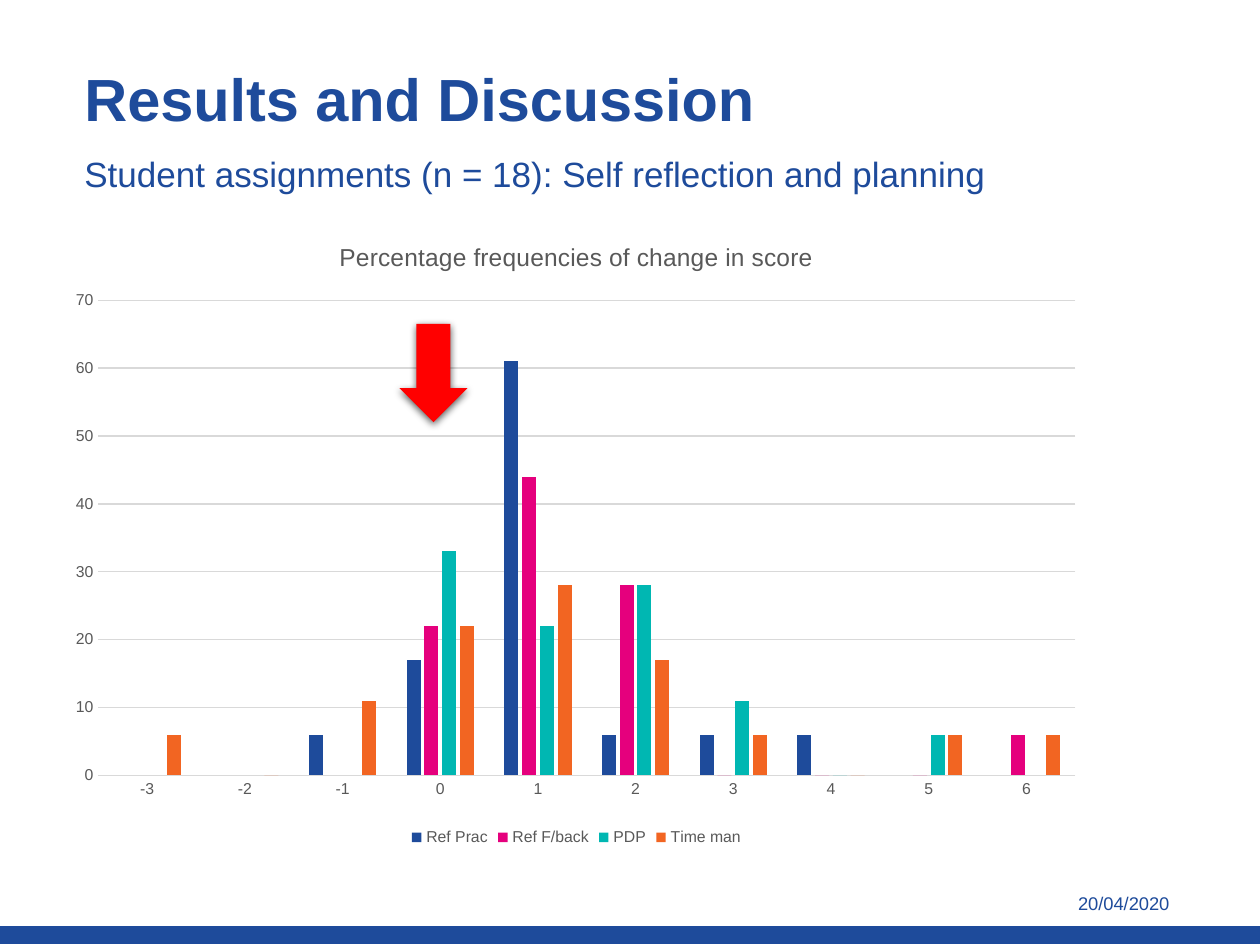
from dataclasses import dataclass

from lxml import etree
from pptx import Presentation
from pptx.chart.data import CategoryChartData
from pptx.dml.color import RGBColor
from pptx.enum.chart import XL_CHART_TYPE, XL_LEGEND_POSITION, XL_TICK_MARK
from pptx.enum.shapes import MSO_SHAPE
from pptx.enum.text import MSO_ANCHOR, PP_ALIGN
from pptx.oxml import parse_xml
from pptx.oxml.ns import nsdecls, qn
from pptx.util import Inches, Pt

COLUMN = XL_CHART_TYPE.COLUMN_CLUSTERED
BOTTOM = XL_LEGEND_POSITION.BOTTOM
NO_TICK = XL_TICK_MARK.NONE
RECT, ARROW = MSO_SHAPE.RECTANGLE, MSO_SHAPE.DOWN_ARROW
TOP, MIDDLE = MSO_ANCHOR.TOP, MSO_ANCHOR.MIDDLE
LEFT, RIGHT = PP_ALIGN.LEFT, PP_ALIGN.RIGHT


@dataclass(frozen=True)
class Theme:
    font: str = "Arial"
    blue: str = "1E4B9B"
    pink: str = "E5007D"
    teal: str = "00B7B2"
    orange: str = "F26522"
    red: str = "FF0000"
    gray: str = "595959"
    grid: str = "D9D9D9"
    head: float = 34
    sub: float = 20
    title: float = 14
    date: float = 10.5
    label: float = 9


THEME = Theme()
SCORES = [str(n) for n in range(-3, 7)]
SERIES = [
    ("Ref Prac", THEME.blue, [None, None, 6, 17, 61, 6, 6, 6, None, None]),
    ("Ref F/back", THEME.pink, [None, None, None, 22, 44, 28, 0, 0, 0, 6]),
    ("PDP", THEME.teal, [None, None, None, 33, 22, 28, 11, 0, 6, None]),
    ("Time man", THEME.orange, [6, 0, 11, 22, 28, 17, 6, 0, 6, 6]),
]


def color(code):
    return RGBColor.from_string(code)


def style(font, size, code, bold=False):
    font.name = THEME.font
    font.size = Pt(size)
    font.bold = bold
    font.color.rgb = color(code)


def paint(fill, code):
    fill.solid()
    fill.fore_color.rgb = color(code)


def stroke(line, code, width=0.75):
    line.color.rgb = color(code)
    line.width = Pt(width)


def add_text(slide, box, text, size, bold=False, align=LEFT, anchor=TOP,
             pads=(0.04, 0.04, 0.02, 0.04), space=None):
    frame = slide.shapes.add_textbox(*map(Inches, box)).text_frame
    frame.word_wrap = True
    frame.vertical_anchor = anchor
    (frame.margin_left, frame.margin_top,
     frame.margin_right, frame.margin_bottom) = map(Inches, pads)
    para = frame.paragraphs[0]
    para.text = text
    para.alignment = align
    para.line_spacing = space
    style(para.font, size, THEME.blue, bold)


def add_block(slide, kind, box, code):
    shape = slide.shapes.add_shape(kind, *map(Inches, box))
    shape.shadow.inherit = False
    paint(shape.fill, code)
    shape.line.fill.background()
    return shape


def add_shade(shape):
    effects = shape._element.spPr.find(qn("a:effectLst"))
    shade = etree.SubElement(
        effects, qn("a:outerShdw"), blurRad=str(Pt(4.5)), dist=str(Pt(1.5)),
        dir="5400000", algn="ctr", rotWithShape="0")
    black = etree.SubElement(shade, qn("a:srgbClr"), val="000000")
    etree.SubElement(black, qn("a:alpha"), val="63000")


def place_plot(chart, **place):
    area = chart._chartSpace.chart.plotArea
    for old in area.findall(qn("c:layout")):
        area.remove(old)
    sides = "".join(f'<c:{key} val="{val}"/>' for key, val in place.items())
    area.insert(0, parse_xml(
        f'<c:layout {nsdecls("c")}><c:manualLayout>'
        '<c:layoutTarget val="inner"/><c:xMode val="edge"/>'
        f'<c:yMode val="edge"/>{sides}</c:manualLayout></c:layout>'))


def style_axes(chart):
    cats, vals = chart.category_axis, chart.value_axis
    for axis in (cats, vals):
        axis.major_tick_mark = axis.minor_tick_mark = NO_TICK
        style(axis.tick_labels.font, THEME.label, THEME.gray)
    stroke(cats.format.line, THEME.grid)
    vals.format.line.fill.background()
    vals.minimum_scale, vals.maximum_scale, vals.major_unit = 0, 70, 10
    vals.has_major_gridlines = True
    stroke(vals.major_gridlines.format.line, THEME.grid)


def add_bars(slide, box, title):
    data = CategoryChartData()
    data.categories = SCORES
    for name, _, vals in SERIES:
        data.add_series(name, vals)
    chart = slide.shapes.add_chart(COLUMN, *map(Inches, box), data).chart
    style(chart.font, THEME.label, THEME.gray)
    chart.has_title = True
    para = chart.chart_title.text_frame.paragraphs[0]
    para.text = title
    style(para.font, THEME.title, THEME.gray)
    chart.chart_title.include_in_layout = False
    chart.has_legend = True
    chart.legend.position = BOTTOM
    chart.legend.include_in_layout = False
    style(chart.legend.font, THEME.label, THEME.gray)
    style_axes(chart)
    plot = chart.plots[0]
    plot.gap_width, plot.overlap = 219, -27
    plot.vary_by_categories = False
    for bars, (_, code, _) in zip(plot.series, SERIES):
        bars.invert_if_negative = False
        paint(bars.format.fill, code)
    place_plot(chart, x=0.04, y=0.13, w=0.94, h=0.75)


def main():
    deck = Presentation()
    deck.slide_width, deck.slide_height = Inches(10), Inches(7.5)
    slide = deck.slides.add_slide(deck.slide_layouts[6])
    band = add_block(slide, RECT, (0, 7.36, 10, 0.13), THEME.blue)
    stroke(band.line, THEME.blue, 1)
    add_text(slide, (8.3, 7.03, 1.08, 0.28), "20/04/2020", THEME.date,
             align=RIGHT, pads=(0.1, 0.05, 0.1, 0.05))
    add_text(slide, (0.63, 0.54, 6.52, 0.93), "Results and Discussion",
             THEME.head, bold=True, space=0.85)
    add_text(slide, (0.63, 1.02, 7.63, 0.59),
             "Student assignments (n = 18): Self reflection and planning",
             THEME.sub, anchor=MIDDLE, pads=(0.04, 0.16, 0.02, 0.04))
    add_bars(slide, (0.45, 1.73, 8.25, 5.03),
             "Percentage frequencies of change in score")
    add_shade(add_block(slide, ARROW, (3.17, 2.57, 0.54, 0.78), THEME.red))
    deck.save("out.pptx")


if __name__ == "__main__":
    main()
